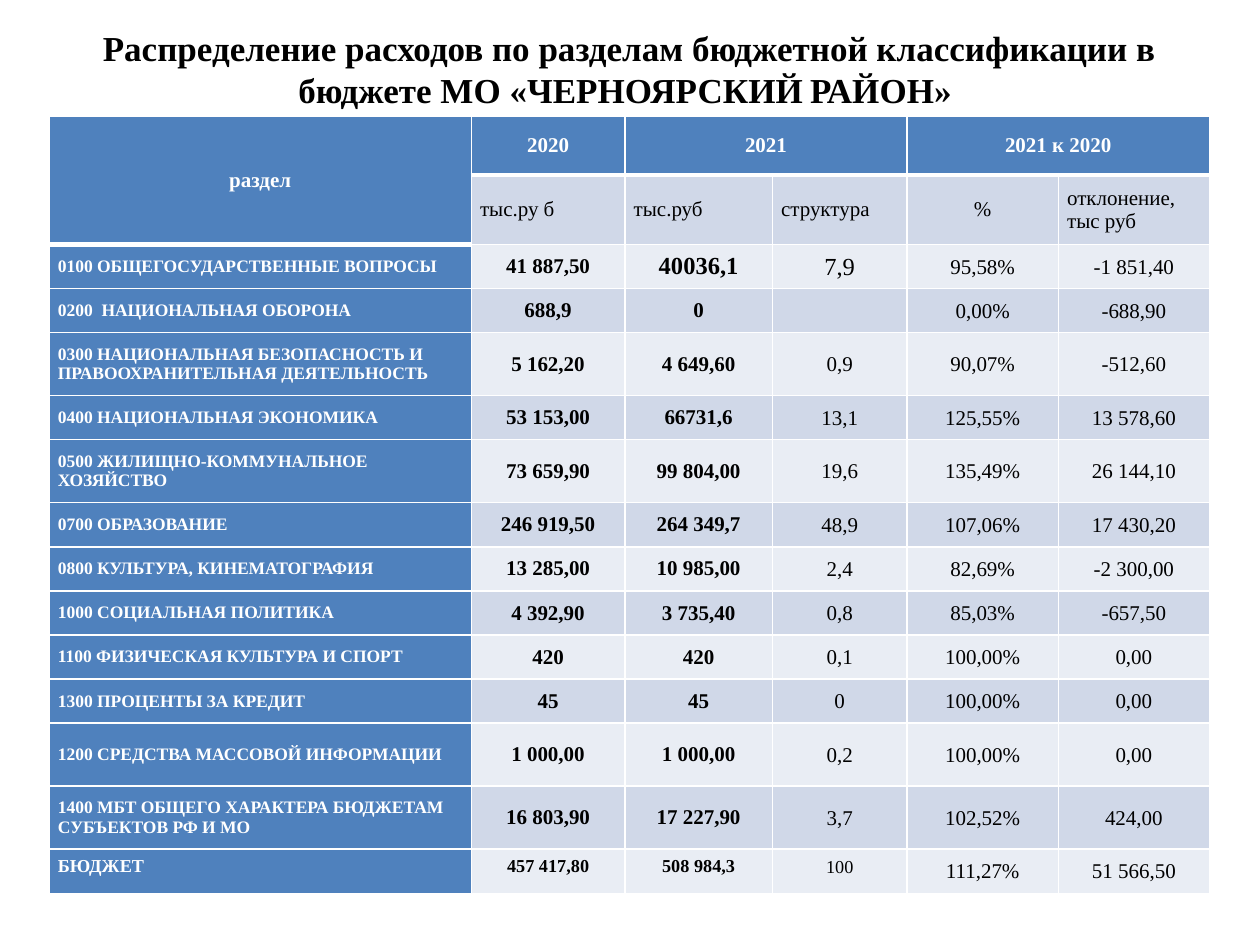
import pptx
import pptx.util
import pptx.dml.color
import pptx.enum.text
import pptx.oxml

Inches = pptx.util.Inches
Pt = pptx.util.Pt
ALIGN = pptx.enum.text.PP_ALIGN
MIDDLE = pptx.enum.text.MSO_ANCHOR.MIDDLE
FONT = "Times New Roman"
COLORS = {"white": "FFFFFF", "black": "000000", "blue": "4F81BD",
          "dark": "D0D8E8", "light": "E9EDF4"}
NS = "http://schemas.openxmlformats.org/drawingml/2006/main"

COLS = [3.35, 1.22, 1.17, 1.07, 1.2, 1.2]
HEADS = ["раздел", "2020", "2021", "", "2021 к 2020", ""]
UNITS = ["", "тыс.ру б", "тыс.руб", "структура", "%", "отклонение, тыс руб"]
ROWS = [
    ["0100 ОБЩЕГОСУДАРСТВЕННЫЕ ВОПРОСЫ", "41 887,50", "40036,1", "7,9", "95,58%", "-1 851,40"],
    ["0200  НАЦИОНАЛЬНАЯ ОБОРОНА", "688,9", "0", "", "0,00%", "-688,90"],
    ["0300 НАЦИОНАЛЬНАЯ БЕЗОПАСНОСТЬ И ПРАВООХРАНИТЕЛЬНАЯ ДЕЯТЕЛЬНОСТЬ",
     "5 162,20", "4 649,60", "0,9", "90,07%", "-512,60"],
    ["0400 НАЦИОНАЛЬНАЯ ЭКОНОМИКА", "53 153,00", "66731,6", "13,1", "125,55%", "13 578,60"],
    ["0500 ЖИЛИЩНО-КОММУНАЛЬНОЕ ХОЗЯЙСТВО",
     "73 659,90", "99 804,00", "19,6", "135,49%", "26 144,10"],
    ["0700 ОБРАЗОВАНИЕ", "246 919,50", "264 349,7", "48,9", "107,06%", "17 430,20"],
    ["0800 КУЛЬТУРА, КИНЕМАТОГРАФИЯ", "13 285,00", "10 985,00", "2,4", "82,69%", "-2 300,00"],
    ["1000 СОЦИАЛЬНАЯ ПОЛИТИКА", "4 392,90", "3 735,40", "0,8", "85,03%", "-657,50"],
    ["1100 ФИЗИЧЕСКАЯ КУЛЬТУРА И СПОРТ", "420", "420", "0,1", "100,00%", "0,00"],
    ["1300 ПРОЦЕНТЫ ЗА КРЕДИТ", "45", "45", "0", "100,00%", "0,00"],
    ["1200 СРЕДСТВА МАССОВОЙ ИНФОРМАЦИИ", "1 000,00", "1 000,00", "0,2", "100,00%", "0,00"],
    ["1400 МБТ ОБЩЕГО ХАРАКТЕРА БЮДЖЕТАМ СУБЪЕКТОВ РФ И МО",
     "16 803,90", "17 227,90", "3,7", "102,52%", "424,00"],
    ["БЮДЖЕТ", "457 417,80", "508 984,3", "100", "111,27%", "51 566,50"],
]
TALL = ("0300", "0500", "1200", "1400")


def rgb(name):
    return pptx.dml.color.RGBColor.from_string(COLORS[name])


def add_run(para, text, size, color="black", bold=False, raised=False):
    run = para.add_run()
    run.text = text
    font = run.font
    font.name, font.size, font.bold = FONT, Pt(size), bold
    font.color.rgb = rgb(color)
    if raised:
        font._element.set("baseline", "30000")


def set_edges(cell, top, bottom):
    props = cell._tc.get_or_add_tcPr()
    for side, width in zip("LRTB", (1, 1, top, bottom)):
        props.append(pptx.oxml.parse_xml(
            f'<a:ln{side} xmlns:a="{NS}" w="{Pt(width)}"><a:solidFill>'
            f'<a:srgbClr val="{COLORS["white"]}"/></a:solidFill></a:ln{side}>'))


def fill_cell(cell, text, fill, align, side=0.07, top=1, bottom=1, **style):
    set_edges(cell, top, bottom)
    cell.fill.solid()
    cell.fill.fore_color.rgb = rgb(fill)
    cell.vertical_anchor = MIDDLE
    cell.margin_left = cell.margin_right = Inches(side)
    cell.margin_top = Inches(0.01 if side < 0.07 else 0)
    cell.margin_bottom = 0
    para = cell.text_frame.paragraphs[0]
    para.alignment = align
    if text:
        add_run(para, text, **style)


def add_title(slide):
    title = slide.shapes.title
    title.left, title.top = Inches(0.39), Inches(0.21)
    title.width, title.height = Inches(9.21), Inches(0.67)
    frame = title.text_frame
    frame.word_wrap = True
    frame.auto_size = pptx.enum.text.MSO_AUTO_SIZE.SHAPE_TO_FIT_TEXT
    frame.vertical_anchor = MIDDLE
    frame.margin_left = frame.margin_right = frame.margin_top = frame.margin_bottom = 0
    para = frame.paragraphs[0]
    para.alignment = ALIGN.CENTER
    add_run(para, "Распределение расходов по разделам бюджетной классификации "
                  "в бюджете МО «ЧЕРНОЯРСКИЙ", 20, bold=True)
    add_run(para, " ", 16, bold=True)
    add_run(para, "РАЙОН» ", 20, bold=True)


def fill_heads(table):
    for col, (head, unit) in enumerate(zip(HEADS, UNITS)):
        fill_cell(table.cell(0, col), head, "blue", ALIGN.CENTER, bottom=3,
                  size=12, color="white", bold=True)
        first = col == 0
        fill_cell(table.cell(1, col), unit, "blue" if first else "dark",
                  ALIGN.CENTER if unit == "%" else ALIGN.LEFT,
                  top=3, bottom=3 if first else 1, size=12)
    # Merged headings
    for start, end in (((0, 0), (1, 0)), ((0, 2), (0, 3)), ((0, 4), (0, 5))):
        table.cell(*start).merge(table.cell(*end))


def fill_rows(table):
    for row, values in enumerate(ROWS, 2):
        total = values is ROWS[-1]
        band = "dark" if row % 2 else "light"
        fill_cell(table.cell(row, 0), values[0], "blue", ALIGN.LEFT,
                  top=3 if row == 2 else 1, size=18 if total else 10,
                  color="white", bold=True, raised=total)
        for col, text in enumerate(values[1:], 1):
            raised = total and col < 4
            large = row == 2 and col in (2, 3)
            fill_cell(table.cell(row, col), text, band, ALIGN.CENTER,
                      side=0.07 if col < 3 else 0.01,
                      size=18 if raised else 14 if large else 12,
                      bold=col < 3, raised=raised)


def add_budget(slide):
    highs = [0.47, 0.55] + [0.5 if row[0].startswith(TALL) else 0.35 for row in ROWS]
    table = slide.shapes.add_table(
        len(highs), len(COLS), Inches(0.39), Inches(0.92),
        Inches(sum(COLS)), Inches(sum(highs))).table
    table.first_row = table.horz_banding = False
    for col, width in zip(table.columns, COLS):
        col.width = Inches(width)
    for row, high in zip(table.rows, highs):
        row.height = Inches(high)
    fill_heads(table)
    fill_rows(table)


def main():
    deck = pptx.Presentation()
    deck.slide_width, deck.slide_height = Inches(10), Inches(7.5)
    slide = deck.slides.add_slide(deck.slide_layouts[5])
    add_title(slide)
    add_budget(slide)
    deck.save("out.pptx")


if __name__ == "__main__":
    main()
